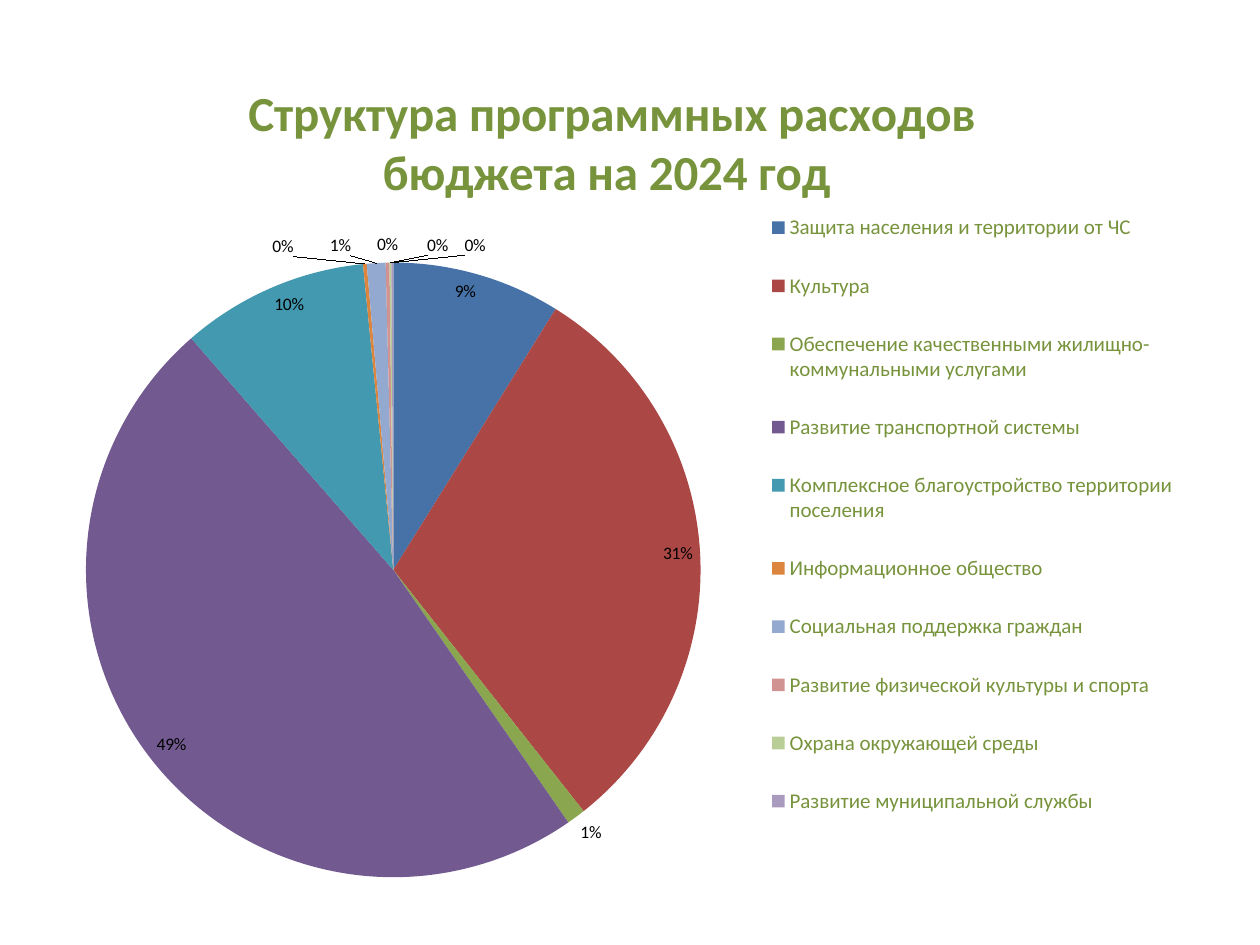
import pptx
import pptx.chart.data
import pptx.dml.color
import pptx.enum.chart
import pptx.oxml
import pptx.oxml.ns
import pptx.util

Pt = pptx.util.Pt
RGB = pptx.dml.color.RGBColor
Place = pptx.enum.chart.XL_LABEL_POSITION

GREEN = RGB(0x77, 0x93, 0x3C)
BLACK = RGB(0x00, 0x00, 0x00)
FONT = "Calibri"
TITLE = "Структура программных расходов бюджета на 2024 год "

# Category, percent, slice colour; slivers that round to 0% keep a small share
PARTS = [
    ("Защита населения и территории от ЧС", 9, RGB(0x46, 0x72, 0xA8)),
    ("Культура", 31, RGB(0xAB, 0x47, 0x44)),
    ("Обеспечение качественными жилищно-коммунальными услугами", 1,
     RGB(0x8A, 0xA6, 0x4F)),
    ("Развитие транспортной системы", 49, RGB(0x72, 0x5A, 0x90)),
    ("Комплексное благоустройство территории поселения", 10,
     RGB(0x42, 0x99, 0xB0)),
    ("Информационное общество", 0.2, RGB(0xDC, 0x85, 0x3E)),
    ("Социальная поддержка граждан", 1, RGB(0x93, 0xA9, 0xCF)),
    ("Развитие физической культуры и спорта", 0.2, RGB(0xD1, 0x93, 0x92)),
    ("Охрана окружающей среды", 0.1, RGB(0xB9, 0xCD, 0x96)),
    ("Развитие муниципальной службы", 0.1, RGB(0xA9, 0x9B, 0xBD)),
]
FIRST = 5  # first of the small slices whose labels fan out at the top
SHIFTS = [-0.06, -0.03, 0, 0.04, 0.07]


def layout(x, y, w=None, h=None, inner=False):
    """Return a manual layout element in fractions of the chart."""
    rows = [("layoutTarget", "inner")] if inner else []
    if w is not None:
        rows += [("xMode", "edge"), ("yMode", "edge")]
    rows += [("x", x), ("y", y)]
    if w:
        rows += [("w", w), ("h", h)]
    body = "".join(f'<c:{tag} val="{val}"/>' for tag, val in rows)
    space = pptx.oxml.ns.nsdecls("c")
    return pptx.oxml.parse_xml(
        f"<c:layout {space}><c:manualLayout>{body}</c:manualLayout></c:layout>")


def put(node, item, after=None):
    """Place a layout in a chart part, replacing the one it has."""
    for old in node.findall(pptx.oxml.ns.qn("c:layout")):
        node.remove(old)
    if after is None:
        node.insert(0, item)
    else:
        node.find(pptx.oxml.ns.qn(after)).addnext(item)


def style(font, size, color, bold=False):
    font.name = FONT
    font.size = Pt(size)
    font.color.rgb = color
    font.bold = bold


def add_pie(slide):
    data = pptx.chart.data.CategoryChartData(number_format='0"%"')
    data.categories = [name for name, _, _ in PARTS]
    data.add_series(TITLE, [value for _, value, _ in PARTS])
    frame = slide.shapes.add_chart(
        pptx.enum.chart.XL_CHART_TYPE.PIE,
        Pt(8.6), Pt(26), Pt(675.4), Pt(487.4), data)
    chart = frame.chart
    style(chart.font, 10, BLACK)
    chart.plots[0].vary_by_categories = True
    return chart


def add_title(chart):
    chart.has_title = True
    title = chart.chart_title
    title.include_in_layout = False
    para = title.text_frame.paragraphs[0]
    para.text = TITLE
    style(para.runs[0].font, 28, GREEN, True)
    put(title._element, layout(0.19, 0.03, 0), "c:tx")


def add_legend(chart):
    chart.has_legend = True
    legend = chart.legend
    legend.position = pptx.enum.chart.XL_LEGEND_POSITION.RIGHT
    legend.include_in_layout = False
    style(legend.font, 12, GREEN)
    put(legend._element, layout(0.63, 0.16, 0.36, 0.78), "c:legendPos")


def paint(series):
    for i, (_, _, color) in enumerate(PARTS):
        fill = series.points[i].format.fill
        fill.solid()
        fill.fore_color.rgb = color
        series.points[i].format.line.fill.background()


def label(series):
    labels = series.data_labels
    labels.show_value = True
    labels.position = Place.INSIDE_END
    style(labels.font, 10, BLACK)
    series.points[2].data_label.position = Place.OUTSIDE_END
    for i, shift in enumerate(SHIFTS, FIRST):
        mark = series.points[i].data_label
        mark.position = Place.OUTSIDE_END
        put(mark._get_or_add_dLbl(), layout(shift, -0.001 if not shift else 0),
            "c:idx")


def main():
    deck = pptx.Presentation()
    deck.slide_width, deck.slide_height = Pt(720), Pt(540)
    slide = deck.slides.add_slide(deck.slide_layouts[6])
    chart = add_pie(slide)
    add_title(chart)
    add_legend(chart)
    plot = chart.plots[0]
    put(plot._element.getparent(), layout(0.06, 0.25, 0.52, 0.73, True))
    paint(plot.series[0])
    label(plot.series[0])
    deck.save("out.pptx")


if __name__ == "__main__":
    main()
